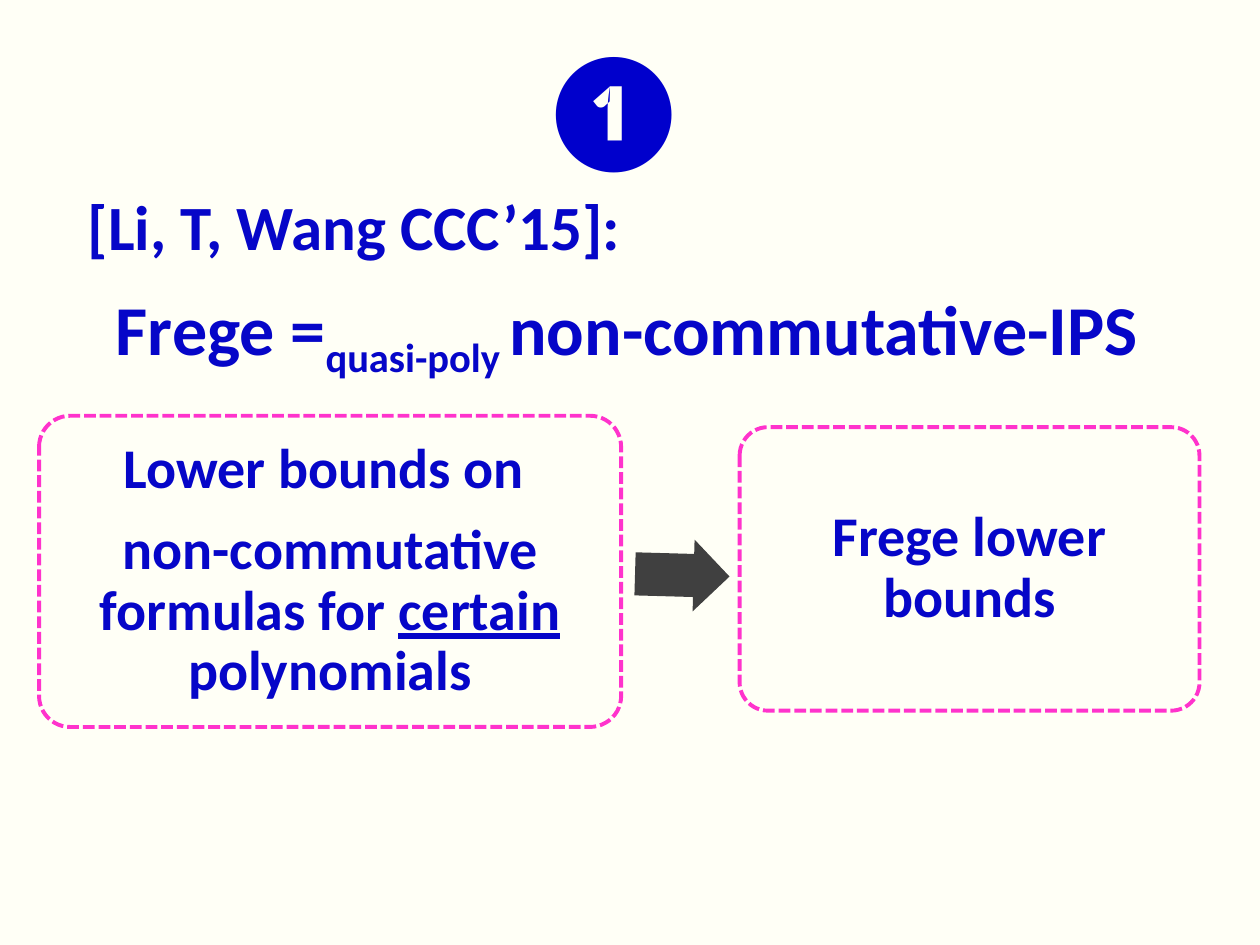
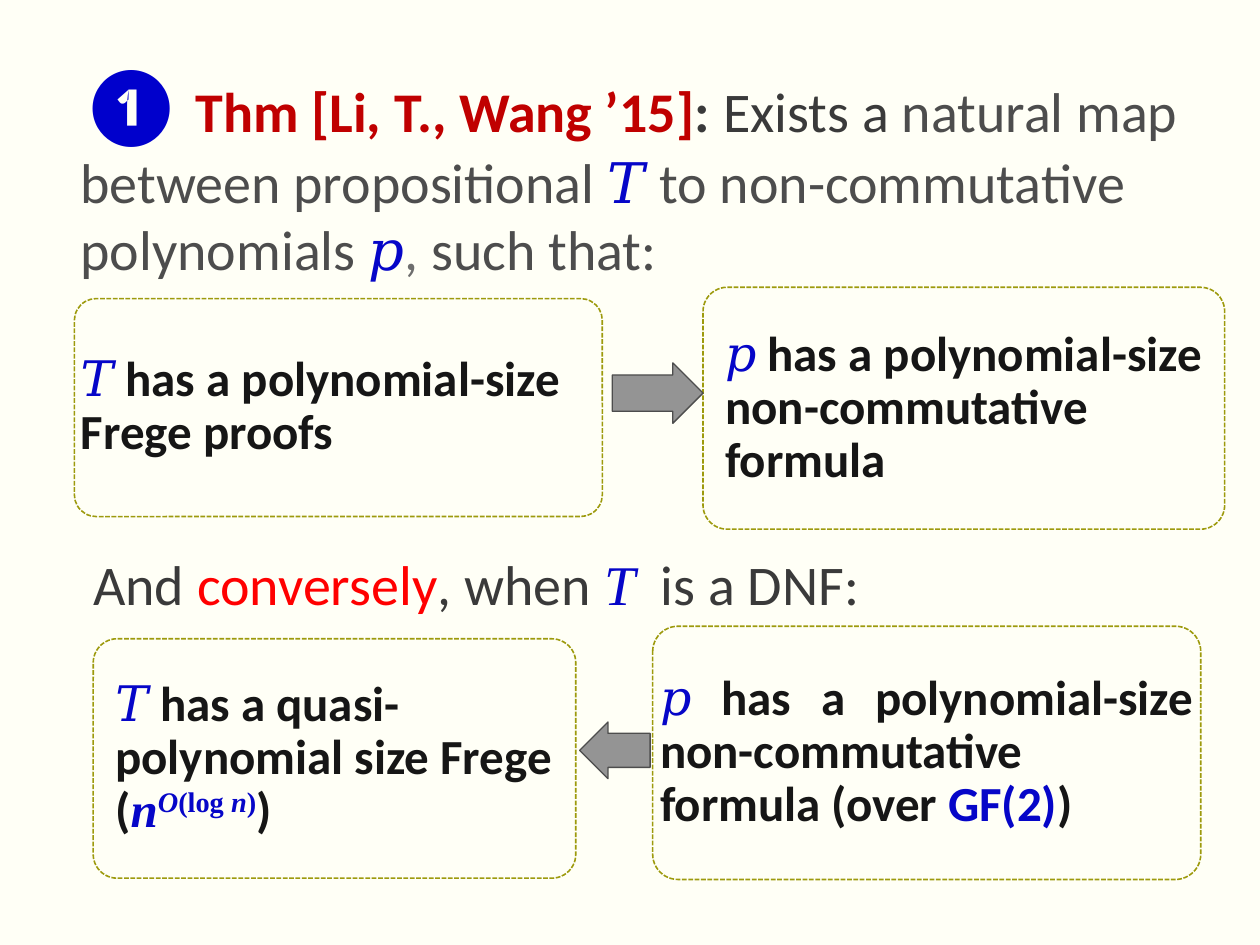
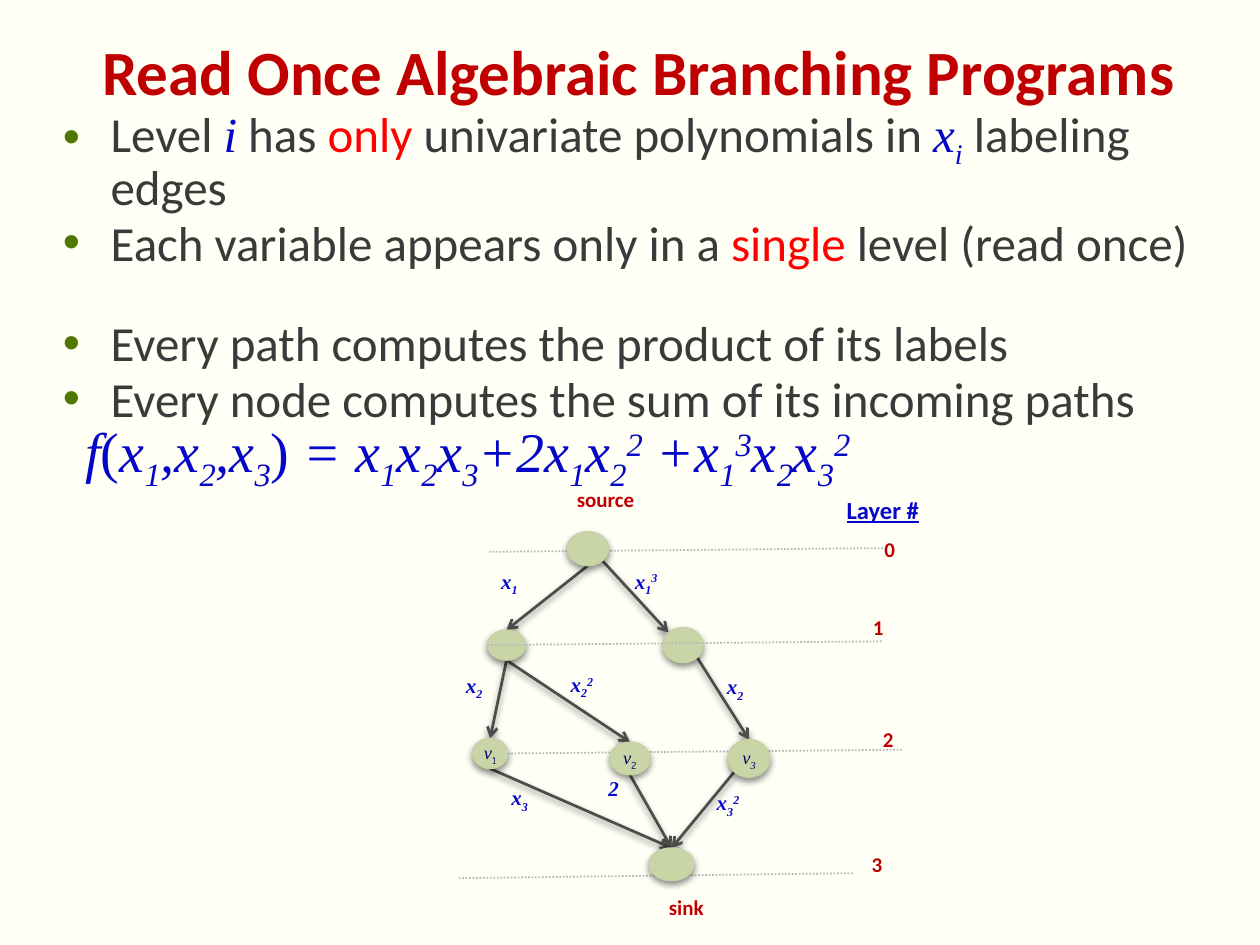
import itertools
from dataclasses import dataclass, replace
from typing import NamedTuple, Optional

import lxml.etree
import pptx
import pptx.dml.color
import pptx.enum.dml
import pptx.enum.shapes
import pptx.enum.text
import pptx.oxml.ns
import pptx.util

COLORS = {
    "background": "FFFFF6", "navy": "0606C8", "badge": "0000CC", "crimson": "C00000",
    "red": "FF0000", "body": "3A3A3A", "soft": "4D4D4D", "pale": "6E6E6E", "ink": "161616",
    "pink": "FF33CC", "olive": "9D9A0D", "bullet": "507800", "dark_arrow": "404040",
    "gray_arrow": "949494", "guide": "B8B8B8", "node": "C9D5A7", "node_line": "C6D2A1",
    "node_text": "000066", "shadow": "000000",
}
SANS, SERIF, COMIC = "Calibri", "Times New Roman", "Comic Neue"
COLUMNS, ROWS = 100, 75
CELL = pptx.util.Inches(10) // COLUMNS

Align = pptx.enum.text.PP_ALIGN
Anchor = pptx.enum.text.MSO_ANCHOR
Preset = pptx.enum.shapes.MSO_SHAPE
Dash = pptx.enum.dml.MSO_LINE
qn = pptx.oxml.ns.qn


class Area(NamedTuple):
    """Place on the slide grid."""
    column: float
    row: float
    columns: float
    rows: float


@dataclass(frozen=True)
class Style:
    color: str
    size: float
    font: str = SANS
    bold: bool = False
    italic: bool = False
    underline: bool = False
    baseline: int = 0


class Run(NamedTuple):
    text: str
    style: Style


@dataclass(frozen=True)
class Paragraph:
    runs: list[Run]
    align: Align = Align.LEFT
    line_spacing: Optional[float] = None
    before: float = 0
    after: float = 0
    left: float = 0
    right: float = 0
    bullet: bool = False


@dataclass(frozen=True)
class Card:
    area: Area
    paragraphs: list[Paragraph]
    inset: float = 0


class Arrow(NamedTuple):
    area: Area
    rotation: float = 0


@dataclass(frozen=True)
class Node:
    area: Area
    index: str = ""
    index_font: str = COMIC


class Edge(NamedTuple):
    parent: str
    parent_site: str
    child: str
    child_site: str


class Guide(NamedTuple):
    start: tuple[float, float]
    end: tuple[float, float]


class Label(NamedTuple):
    column: float
    row: float
    markup: str


HEADLINE = Style("navy", 32, bold=True)
FORMULA = Style("navy", 32, SERIF, italic=True)
EDGE_LABEL = Style("navy", 12, SERIF, bold=True, italic=True)
TAG = Style("crimson", 12, bold=True)
TITLE = Style("crimson", 36, bold=True)
NODE_LABEL = Style("node_text", 10.5, SERIF, italic=True)
SUBSCRIPT, SUPERSCRIPT = -25, 30
SITES = {"top": (0, -1), "bottom": (0, 1), "top left": (-0.71, -0.71),
         "bottom left": (-0.71, 0.71), "bottom right": (0.71, 0.71)}


def cells(count: float) -> int:
    return round(count * CELL)


def rgb(name: str) -> pptx.dml.color.RGBColor:
    return pptx.dml.color.RGBColor.from_string(COLORS[name])


def add_element(parent, tag: str, **attributes):
    return lxml.etree.SubElement(parent, qn(tag), {key: str(value) for key, value in attributes.items()})


def math_runs(markup: str, style: Style) -> list[Run]:
    """Read _ and ^ as lowering or raising the next character; brackets stand upright."""
    marks = {"_": SUBSCRIPT, "^": SUPERSCRIPT}
    pieces, baseline = [], 0
    for character in markup:
        if character in marks:
            baseline = marks[character]
            continue
        slanted = style.italic and character not in "()"
        pieces.append((character, replace(style, baseline=baseline, italic=slanted)))
        baseline = 0
    return [Run("".join(piece[0] for piece in group), run_style)
            for run_style, group in itertools.groupby(pieces, key=lambda piece: piece[1])]


def write(shape, paragraphs: list[Paragraph], anchor: Anchor = Anchor.TOP,
          inset: Optional[float] = None, wrap: bool = True) -> None:
    frame = shape.text_frame
    frame.word_wrap = wrap
    frame.vertical_anchor = anchor
    if inset is not None:
        frame.margin_left = frame.margin_right = cells(inset)
        frame.margin_top = frame.margin_bottom = cells(inset)
    for number, content in enumerate(paragraphs):
        paragraph = frame.add_paragraph() if number else frame.paragraphs[0]
        paragraph.alignment = content.align
        properties = paragraph._p.get_or_add_pPr()
        properties.set("marL", str(cells(content.left)))
        properties.set("marR", str(cells(content.right)))
        if content.bullet:
            properties.set("indent", str(-cells(content.left)))
            color = add_element(properties, "a:buClr")
            add_element(color, "a:srgbClr", val=COLORS["bullet"])
            add_element(properties, "a:buFont", typeface="Arial")
            add_element(properties, "a:buChar", char="•")
        if content.line_spacing:
            paragraph.line_spacing = content.line_spacing
        if content.before:
            paragraph.space_before = pptx.util.Pt(content.before)
        if content.after:
            paragraph.space_after = pptx.util.Pt(content.after)
        for text, style in content.runs:
            run = paragraph.add_run()
            run.text = text
            run.font.name = style.font
            run.font.size = pptx.util.Pt(style.size)
            run.font.bold = style.bold
            run.font.italic = style.italic
            run.font.underline = style.underline
            run.font.color.rgb = rgb(style.color)
            if style.baseline:
                run.font._rPr.set("baseline", str(style.baseline * 1000))


def add_text(slide, area: Area, paragraphs: list[Paragraph], anchor: Anchor = Anchor.TOP,
             inset: Optional[float] = None) -> None:
    write(slide.shapes.add_textbox(*map(cells, area)), paragraphs, anchor, inset)


def set_line(line, color: str, width: float, dash: Optional[Dash] = None) -> None:
    line.color.rgb = rgb(color)
    line.width = pptx.util.Pt(width)
    if dash:
        line.dash_style = dash


def set_effects(shape, shadow: bool) -> None:
    """Replace the theme's shadow; call after fill and line are set."""
    effects = add_element(shape._element.spPr, "a:effectLst")
    if shadow:
        outer = add_element(effects, "a:outerShdw", blurRad=pptx.util.Pt(4), dist=pptx.util.Pt(2),
                            dir=90 * 60000, rotWithShape=0)
        color = add_element(outer, "a:srgbClr", val=COLORS["shadow"])
        add_element(color, "a:alpha", val=45000)


def add_card(slide, card: Card, color: str, width: float) -> None:
    shape = slide.shapes.add_shape(Preset.ROUNDED_RECTANGLE, *map(cells, card.area))
    shape.adjustments[0] = 0.1
    shape.fill.background()
    set_line(shape.line, color, width, Dash.SQUARE_DOT)
    set_effects(shape, shadow=False)
    write(shape, card.paragraphs, Anchor.MIDDLE, card.inset)


def add_arrow(slide, arrow: Arrow, fill: str, outline: Optional[str] = None) -> None:
    shape = slide.shapes.add_shape(Preset.RIGHT_ARROW, *map(cells, arrow.area))
    shape.adjustments[0], shape.adjustments[1] = 0.6, 0.5
    shape.rotation = arrow.rotation
    shape.fill.solid()
    shape.fill.fore_color.rgb = rgb(fill)
    if outline:
        set_line(shape.line, outline, 0.75)
    else:
        shape.line.fill.background()
    set_effects(shape, shadow=False)


def add_line(slide, start: tuple[float, float], end: tuple[float, float]):
    return slide.shapes.add_connector(pptx.enum.shapes.MSO_CONNECTOR.STRAIGHT,
                                      *map(cells, (*start, *end)))


def add_guide(slide, guide: Guide) -> None:
    line = add_line(slide, guide.start, guide.end)
    set_line(line.line, "guide", 1, Dash.ROUND_DOT)
    set_effects(line, shadow=False)


def site_point(node: Node, site: str) -> tuple[float, float]:
    across, down = SITES[site]
    column, row, columns, rows = node.area
    return column + columns / 2 * (1 + across), row + rows / 2 * (1 + down)


def add_edge(slide, edge: Edge, nodes: dict[str, Node]) -> None:
    line = add_line(slide, site_point(nodes[edge.parent], edge.parent_site),
                    site_point(nodes[edge.child], edge.child_site))
    set_line(line.line, "soft", 1.57)
    add_element(line.line._get_or_add_ln(), "a:tailEnd", type="arrow")
    set_effects(line, shadow=True)


def add_node(slide, node: Node) -> None:
    shape = slide.shapes.add_shape(Preset.OVAL, *map(cells, node.area))
    shape.fill.solid()
    shape.fill.fore_color.rgb = rgb("node")
    set_line(shape.line, "node_line", 0.75)
    set_effects(shape, shadow=True)
    if node.index:
        index_style = replace(NODE_LABEL, font=node.index_font, baseline=SUBSCRIPT,
                              italic=node.index_font == SERIF)
        runs = [Run("v", NODE_LABEL), Run(node.index, index_style)]
        write(shape, [Paragraph(runs, Align.CENTER, 0.95)], Anchor.MIDDLE, 0, wrap=False)


def build_equivalence_slide(slide) -> None:
    def centred(*runs: Run, after: float = 0) -> Paragraph:
        return Paragraph(list(runs), Align.CENTER, 0.9, after=after)

    conditions = Card(Area(3.1, 33, 46.2, 24.7), [
        centred(Run("Lower bounds on ", HEADLINE), after=12),
        centred(Run("non-commutative formulas for ", HEADLINE),
                Run("certain", replace(HEADLINE, underline=True)),
                Run(" polynomials", HEADLINE)),
    ])
    conclusion = Card(Area(58.7, 33.9, 36.5, 22.5),
                      [centred(Run("Frege lower bounds", HEADLINE))], 1.3)
    for card in (conditions, conclusion):
        add_card(slide, card, "pink", 2.25)
    add_arrow(slide, Arrow(Area(50.4, 42.8, 7.5, 5.7), 1.6), "dark_arrow")

    large = replace(HEADLINE, size=40)
    add_text(slide, Area(4.1, 20.7, 91.3, 10.9), [centred(
        Run("Frege =", large), Run("quasi-poly ", replace(large, baseline=SUBSCRIPT)),
        Run("non-commutative-IPS", large))], Anchor.MIDDLE, 0)
    add_text(slide, Area(6, 2.3, 89.7, 19.4), [
        Paragraph([Run("❶", Style("badge", 66, bold=True))], Align.CENTER, right=4.2),
        Paragraph([Run("[Li, T, Wang CCC’15]:", replace(HEADLINE, size=36))], before=8),
    ])


def build_theorem_slide(slide) -> None:
    body, soft = Style("body", 32), Style("soft", 32)
    symbol = replace(FORMULA, italic=False)
    theorem = Paragraph([
        Run("❶", Style("badge", 44, bold=True)), Run(" ", replace(body, bold=True)),
        Run("Thm [Li, T., Wang ’15]", replace(TITLE, size=32)),
        Run(": ", replace(body, bold=True)), Run("Exists a ", body),
        Run("natural map between propositional ", soft), Run("𝑇 ", symbol),
        Run("to non-commutative polynomials ", soft), Run("𝑝", symbol),
        Run(", ", replace(soft, color="pale")), Run("such that:", soft),
    ])
    converse = Paragraph([
        Run("And ", body), Run("conversely", replace(body, color="red")),
        Run(", when ", body), Run("T ", FORMULA), Run(" is a DNF:", body),
    ], before=153, left=1)
    add_text(slide, Area(5.4, 3.9, 92.1, 21.1), [theorem, converse])

    ink = Style("ink", 28, bold=True)
    letter = Style("navy", 28, SERIF, bold=True)
    slanted = replace(letter, italic=True)
    raised = replace(letter, baseline=SUPERSCRIPT)
    raised_slanted = replace(raised, italic=True)

    def statement(*runs: Run, align: Align = Align.LEFT) -> list[Paragraph]:
        return [Paragraph(list(runs), align, 0.9)]

    cards = [
        Card(Area(5.9, 23.7, 41.9, 17.3), statement(
            Run("𝑇 ", letter), Run("has a polynomial-size Frege proofs", ink))),
        Card(Area(55.8, 22.8, 41.4, 19.2), statement(
            Run("𝑝", letter), Run(" has a polynomial-size non-commutative formula", ink)), 1.2),
        Card(Area(51.8, 49.7, 43.5, 20.1), statement(
            Run("𝑝", letter), Run(" has a polynomial-size non-commutative formula (over ", ink),
            Run("GF(2)", replace(ink, color="navy")), Run(")", ink), align=Align.JUSTIFY)),
        Card(Area(7.4, 50.7, 38.3, 19), statement(
            Run("𝑇 ", letter), Run("has a quasi-polynomial size Frege (", ink),
            Run("n", slanted), Run("O", raised_slanted), Run("(log", raised),
            Run(" n", raised_slanted), Run(")", raised), Run(")", ink)), 1.2),
    ]
    for card in cards:
        add_card(slide, card, "olive", 0.9)
    for arrow in (Arrow(Area(48.6, 28.8, 7.2, 4.8)), Arrow(Area(46, 57.3, 5.6, 4.5), 180)):
        add_arrow(slide, arrow, "gray_arrow", "soft")


def build_branching_program_slide(slide) -> None:
    body = Style("body", 28)
    red, variable = replace(body, color="red"), replace(FORMULA, size=28)
    bullets = [
        [Run("Level ", body), Run("i", variable), Run(" has ", body), Run("only", red),
         Run(" univariate polynomials in ", body), *math_runs("x_i", variable),
         Run(" labeling edges", body)],
        [Run("Each variable appears only in a ", body), Run("single", red),
         Run(" level (read once)", body)],
        [Run("Every path computes the product of its labels", body)],
        [Run("Every node computes the sum of its incoming paths", body)],
    ]
    line_height = pptx.util.Pt(26)
    gaps = [0, 5.6, 31.6, 5.6]
    guides = [Guide((38.8, 43.8), (70.2, 43.5)), Guide((36.4, 69.7), (67.8, 69.3)),
              Guide((40.3, 59.8), (71.7, 59.5))]
    front_guide = Guide((38.7, 51.2), (70.1, 50.9))
    nodes = {
        "source": Node(Area(45, 42.2, 3.3, 2.7)),
        "left": Node(Area(38.7, 50, 3, 2.4)),
        "right": Node(Area(52.6, 49.8, 3.2, 2.8)),
        "v1": Node(Area(37.5, 58.6, 2.8, 2.4), "1"),
        "v2": Node(Area(48.4, 58.9, 3.2, 2.6), "2"),
        "v3": Node(Area(57.8, 58.7, 3.3, 3), "3", SERIF),
        "sink": Node(Area(51.5, 67.3, 3.6, 2.6)),
    }
    edges = [
        Edge("source", "bottom", "left", "top"),
        Edge("source", "bottom right", "right", "top left"),
        Edge("left", "bottom", "v1", "top"),
        Edge("left", "bottom", "v2", "top"),
        Edge("right", "bottom right", "v3", "top"),
        Edge("v1", "bottom", "sink", "top"),
        Edge("v2", "bottom", "sink", "top"),
        Edge("v3", "bottom left", "sink", "top"),
    ]
    edge_labels = [
        Label(38.8, 44.6, "x_1"), Label(49.4, 44.6, "x_1^3"), Label(36, 52.9, "x_2"),
        Label(44.3, 52.8, "x_2^2"), Label(56.7, 53, "x_2"), Label(39.6, 61.8, "x_3"),
        Label(47.3, 61.1, "2"), Label(55.9, 62.2, "x_3^2"),
    ]
    tags = [
        Label(44.8, 38.1, "source"), Label(52.1, 70.5, "sink"), Label(69.2, 42.1, "0"),
        Label(68.3, 48.3, "1"), Label(69.1, 57.2, "2"), Label(68.2, 67.1, "3"),
    ]

    add_text(slide, Area(2.9, 1.6, 95.6, 8), [Paragraph(
        [Run("Read Once Algebraic Branching Programs", TITLE)], Align.CENTER)], Anchor.MIDDLE)
    add_text(slide, Area(4, 9.4, 91.9, 47.2), [
        Paragraph(runs, line_spacing=line_height, before=gap, left=3.8, bullet=True)
        for runs, gap in zip(bullets, gaps)])
    formula = "f(x_1,x_2,x_3) = x_1x_2x_3+2x_1x_2^2 +x_1^3x_2x_3^2"
    add_text(slide, Area(5.8, 32.6, 66.4, 6.4), [Paragraph(math_runs(formula, FORMULA))])

    for guide in guides:
        add_guide(slide, guide)
    for edge in edges:
        add_edge(slide, edge, nodes)
    for node in nodes.values():
        add_node(slide, node)
    add_guide(slide, front_guide)
    for label in edge_labels:
        add_text(slide, Area(label.column, label.row, 5.7, 3.4),
                 [Paragraph(math_runs(label.markup, EDGE_LABEL))])
    for tag in tags:
        columns = 10.9 if len(tag.markup) > 1 else 3.7
        add_text(slide, Area(tag.column, tag.row, columns, 3.2),
                 [Paragraph([Run(tag.markup, TAG)])])
    layer_style = Style("navy", 14, bold=True, underline=True)
    add_text(slide, Area(66.2, 38.8, 10.9, 3.8), [Paragraph([Run("Layer #", layer_style)])])


def main() -> None:
    presentation = pptx.Presentation()
    presentation.slide_width, presentation.slide_height = cells(COLUMNS), cells(ROWS)
    background = presentation.slide_master.background.fill
    background.solid()
    background.fore_color.rgb = rgb("background")
    blank = presentation.slide_layouts[6]
    for build in (build_equivalence_slide, build_theorem_slide, build_branching_program_slide):
        build(presentation.slides.add_slide(blank))
    presentation.save("out.pptx")


if __name__ == "__main__":
    main()
